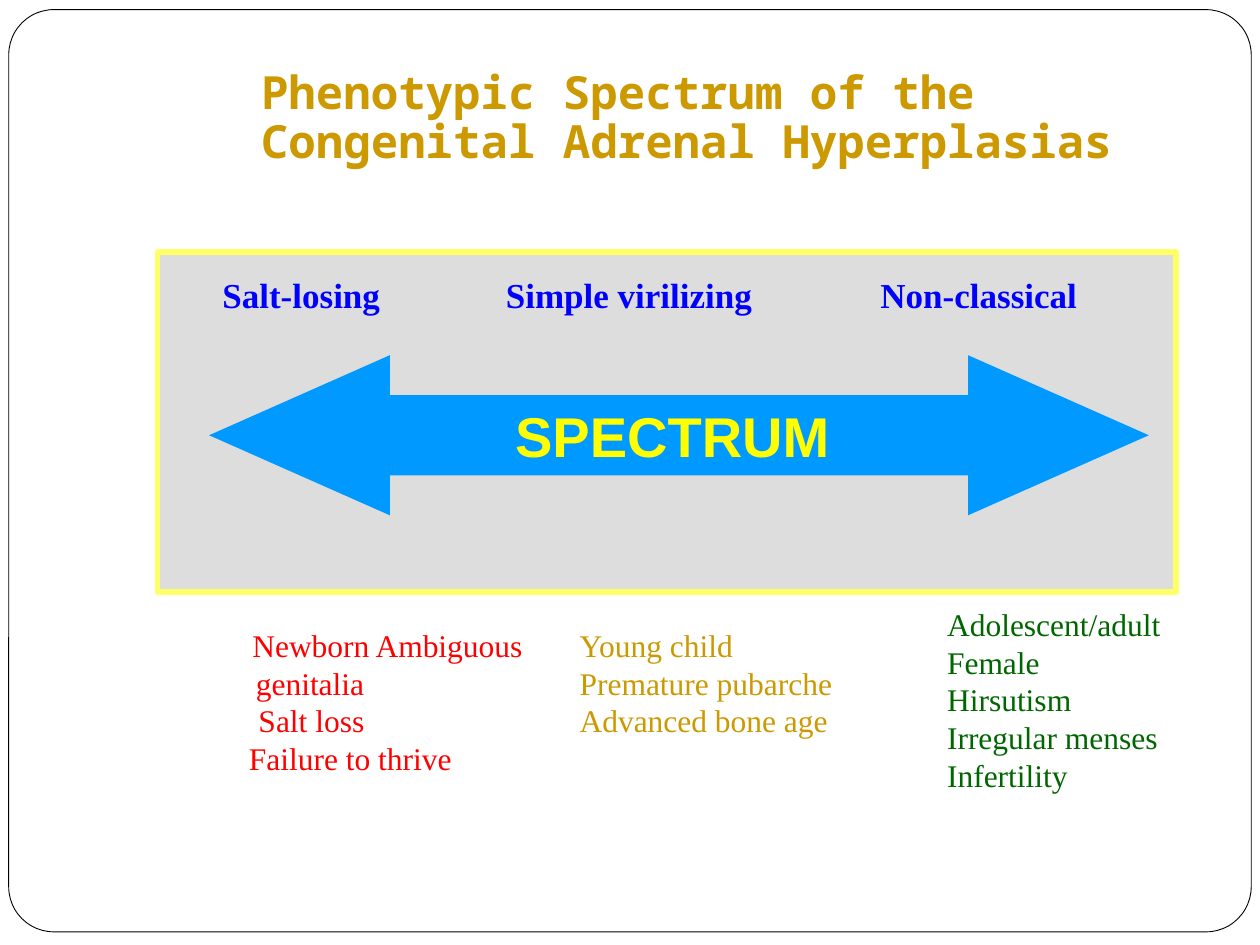
import dataclasses

import lxml.etree
import pptx
import pptx.dml.color
import pptx.enum.shapes
import pptx.enum.text
import pptx.oxml.ns
import pptx.util

Pt = pptx.util.Pt
Kind = pptx.enum.shapes.MSO_SHAPE
Fit = pptx.enum.text.MSO_AUTO_SIZE
Hold = pptx.enum.text.MSO_ANCHOR
Side = pptx.enum.text.PP_ALIGN
qn = pptx.oxml.ns.qn


@dataclasses.dataclass(frozen=True)
class Theme:
    white: str = "FFFFFF"
    black: str = "000000"
    gold: str = "CC9900"
    gray: str = "DDDDDD"
    lemon: str = "FFFF66"
    sky: str = "0099FF"
    blue: str = "0000FF"
    yellow: str = "FFFF00"
    shade: str = "666666"
    red: str = "FF0000"
    green: str = "006600"
    mono: str = "Noto Sans Mono"
    serif: str = "Times New Roman"
    sans: str = "Arial"
    head: float = 26.1
    label: float = 20
    banner: float = 32
    item: float = 18


def rgb(hue):
    return pptx.dml.color.RGBColor.from_string(hue)


def put(thing, vals):
    for key, val in vals.items():
        setattr(thing, key, val)


class Deck:
    """Build slide elements in one shared style."""

    def __init__(self, theme):
        self.theme = theme
        self.file = pptx.Presentation()
        put(self.file, {"slide_width": Pt(720), "slide_height": Pt(540)})
        self.slide = self.file.slides.add_slide(self.file.slide_layouts[4])
        self.root = self.slide.shapes

    def place(self, shape, box):
        put(shape, dict(zip(("left", "top", "width", "height"), map(Pt, box))))

    def style(self, para, face, size, hue, bold):
        for run in para.runs:
            put(run.font, {"name": face, "size": Pt(size), "bold": bold})
            run.font.color.rgb = rgb(hue)

    def shape(self, kind, box, fill, line=None, width=0, adjust=()):
        form = self.root.add_shape(kind, *map(Pt, box))
        form.shadow.inherit = False
        form.fill.solid()
        form.fill.fore_color.rgb = rgb(fill)
        for num, val in enumerate(adjust):
            form.adjustments[num] = val
        if line:
            form.line.color.rgb = rgb(line)
            form.line.width = Pt(width)
        else:
            form.line.fill.background()
        return form

    def frame(self, box):
        form = self.shape(Kind.ROUNDED_RECTANGLE, box, self.theme.white,
                          self.theme.black, 0.5, [0.049])
        self.slide.shapes._spTree.insert(2, form._element)

    def title(self, text, box):
        form = self.slide.shapes.title
        self.place(form, box)
        put(form.text_frame, {"auto_size": Fit.NONE, "word_wrap": True,
                              "vertical_anchor": Hold.BOTTOM,
                              "margin_bottom": Pt(3.6)})
        para = form.text_frame.paragraphs[0]
        put(para, {"text": text, "alignment": Side.LEFT, "line_spacing": 0.9})
        self.style(para, self.theme.mono, self.theme.head, self.theme.gold, True)

    def text(self, text, box, face, size, hue, wrap=False):
        form = self.root.add_textbox(*map(Pt, box))
        form.text_frame.word_wrap = wrap
        para = form.text_frame.paragraphs[0]
        para.text = text
        self.style(para, face, size, hue, True)
        return para.runs[0]

    def shade(self, run):
        fill = run.font._element.find(qn("a:solidFill"))
        glow = lxml.etree.Element(qn("a:effectLst"))
        drop = lxml.etree.SubElement(glow, qn("a:outerShdw"), dist=str(Pt(2)), dir="2700000")
        lxml.etree.SubElement(drop, qn("a:srgbClr"), val=self.theme.shade)
        fill.addnext(glow)

    def list(self, slot, rows, box, hue):
        form = self.slide.placeholders[slot]
        self.place(form, box)
        put(form.text_frame, {"auto_size": Fit.NONE, "word_wrap": True,
                              "vertical_anchor": Hold.TOP, "margin_right": 0})
        form.text_frame.text = "\n".join(text for text, *_ in rows)
        for para, (_, left, first) in zip(form.text_frame.paragraphs, rows):
            put(para, {"space_before": Pt(0), "alignment": Side.LEFT})
            prop = para._p.get_or_add_pPr()
            prop.set("marL", str(Pt(left)))
            prop.set("indent", str(Pt(first)))
            lxml.etree.SubElement(prop, qn("a:buNone"))
            self.style(para, self.theme.serif, self.theme.item, hue, False)

    def group(self):
        self.root = self.slide.shapes.add_group_shape().shapes

    def save(self):
        for form in list(self.slide.placeholders):
            if not form.text_frame.text:
                form._element.getparent().remove(form._element)
        self.file.save("out.pptx")


def main():
    theme = Theme()
    deck = Deck(theme)
    deck.frame((5, 5.5, 710, 527))
    deck.title("Phenotypic Spectrum of the\nCongenital Adrenal Hyperplasias",
               (142, 21.6, 578, 78.5))

    deck.group()
    deck.shape(Kind.RECTANGLE, (90, 144, 582, 194.4), theme.gray, theme.lemon, 3)
    for text, left, width in (("Salt-losing", 120, 117),
                              ("Simple virilizing", 282, 166),
                              ("Non-classical", 496, 143)):
        deck.text(text, (left, 152.6, width, 31), theme.serif, theme.label, theme.blue)
    deck.shape(Kind.LEFT_RIGHT_ARROW, (119.5, 203, 537, 91.5), theme.sky,
               adjust=(0.5, 1.129))
    run = deck.text("SPECTRUM", (287.3, 226, 196.6, 45.4), theme.sans, theme.banner,
                    theme.yellow, True)
    deck.shade(run)

    deck.list(1, (("Newborn Ambiguous genitalia", 61, -2), ("Salt loss", 62.5, 0),
                  ("Failure to thrive", 57, 0)), (78, 354, 227, 94), theme.red)
    young = "Young child", "Premature pubarche", "Advanced bone age"
    adult = "Adolescent/adult", "Female", "Hirsutism", "Irregular menses", "Infertility"
    for slot, rows, box, hue in ((2, young, (324, 354, 180, 72), theme.gold),
                                 (3, adult, (534, 342, 186, 115), theme.green)):
        deck.list(slot, [(text, 0, 0) for text in rows], box, hue)
    deck.save()


if __name__ == "__main__":
    main()
